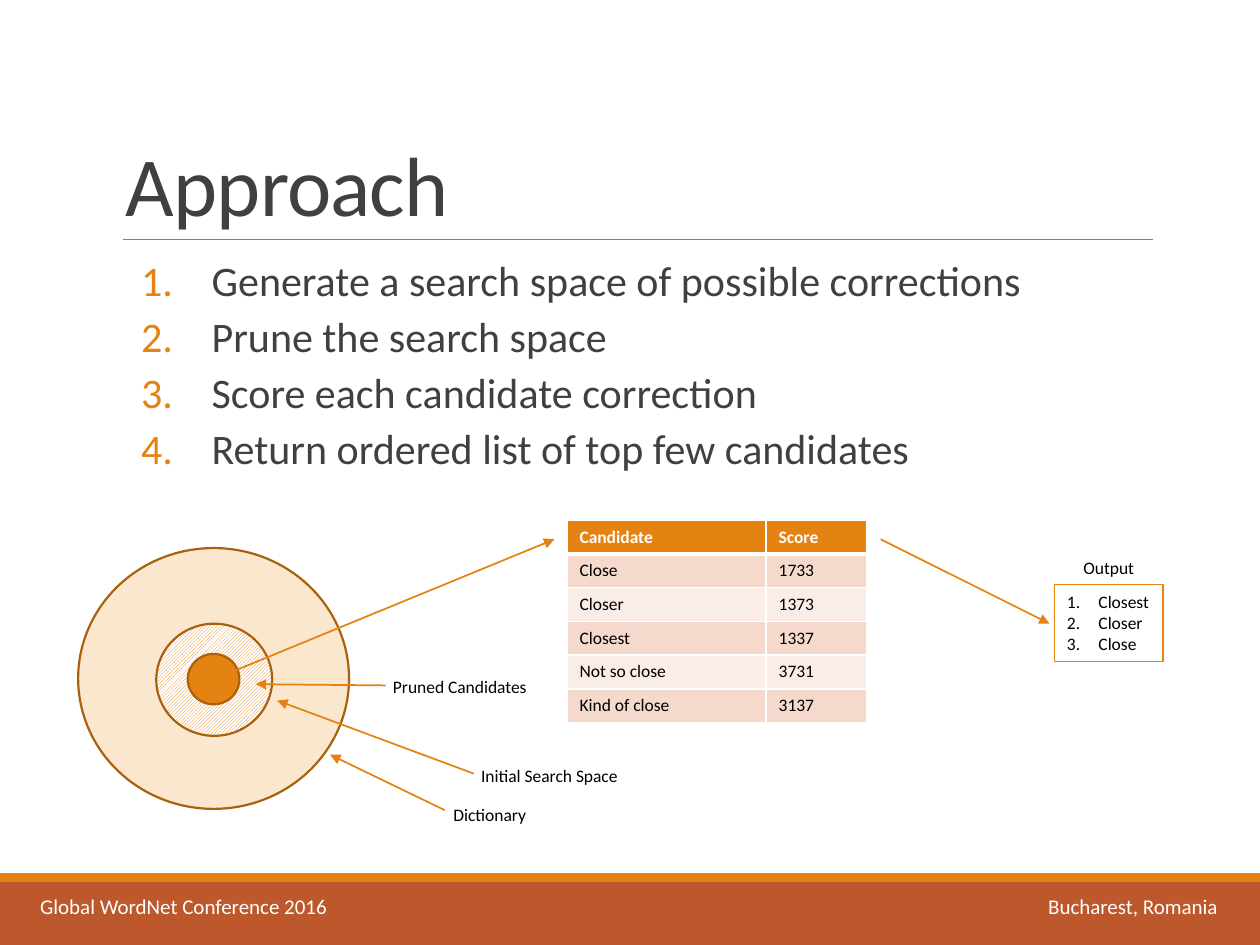
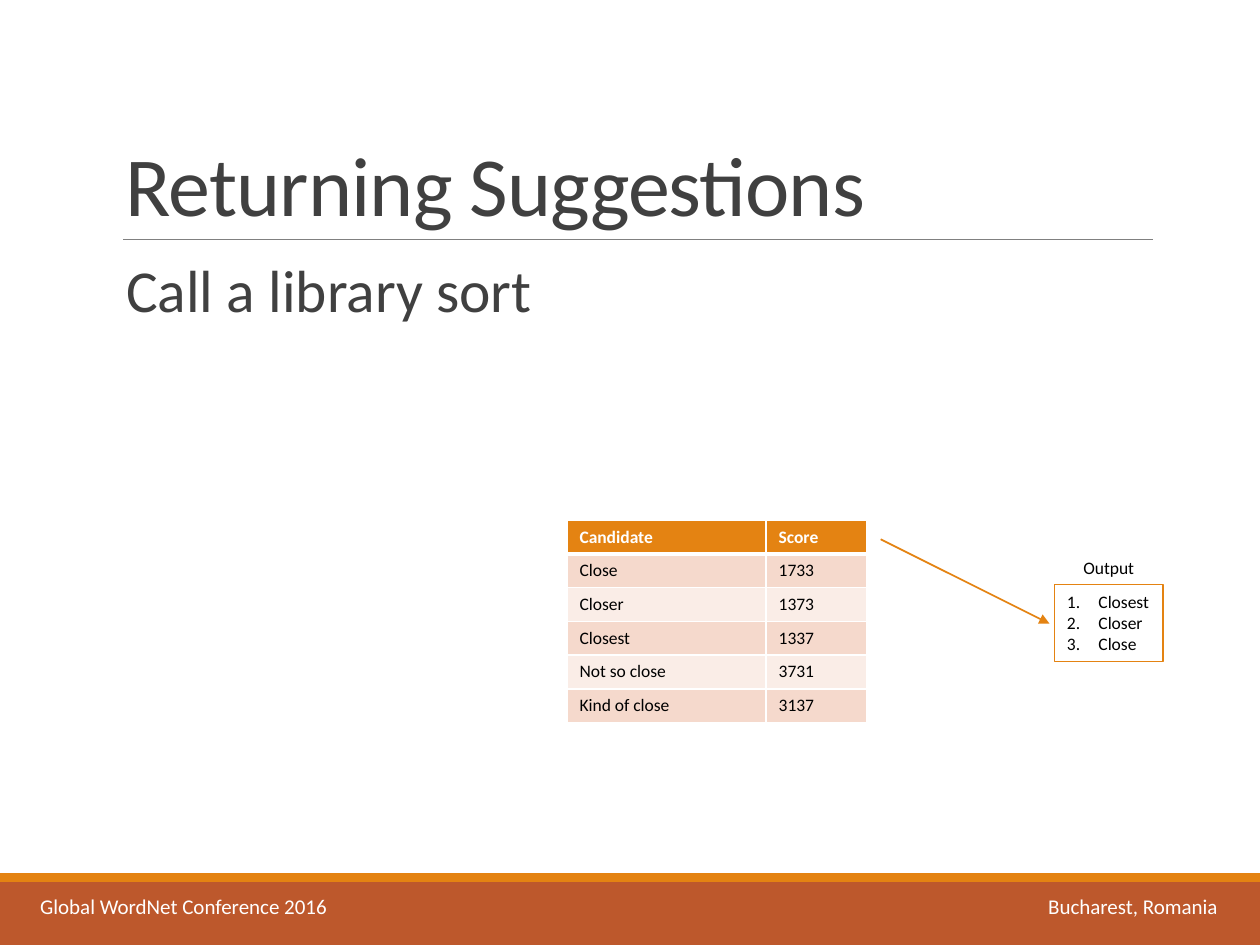
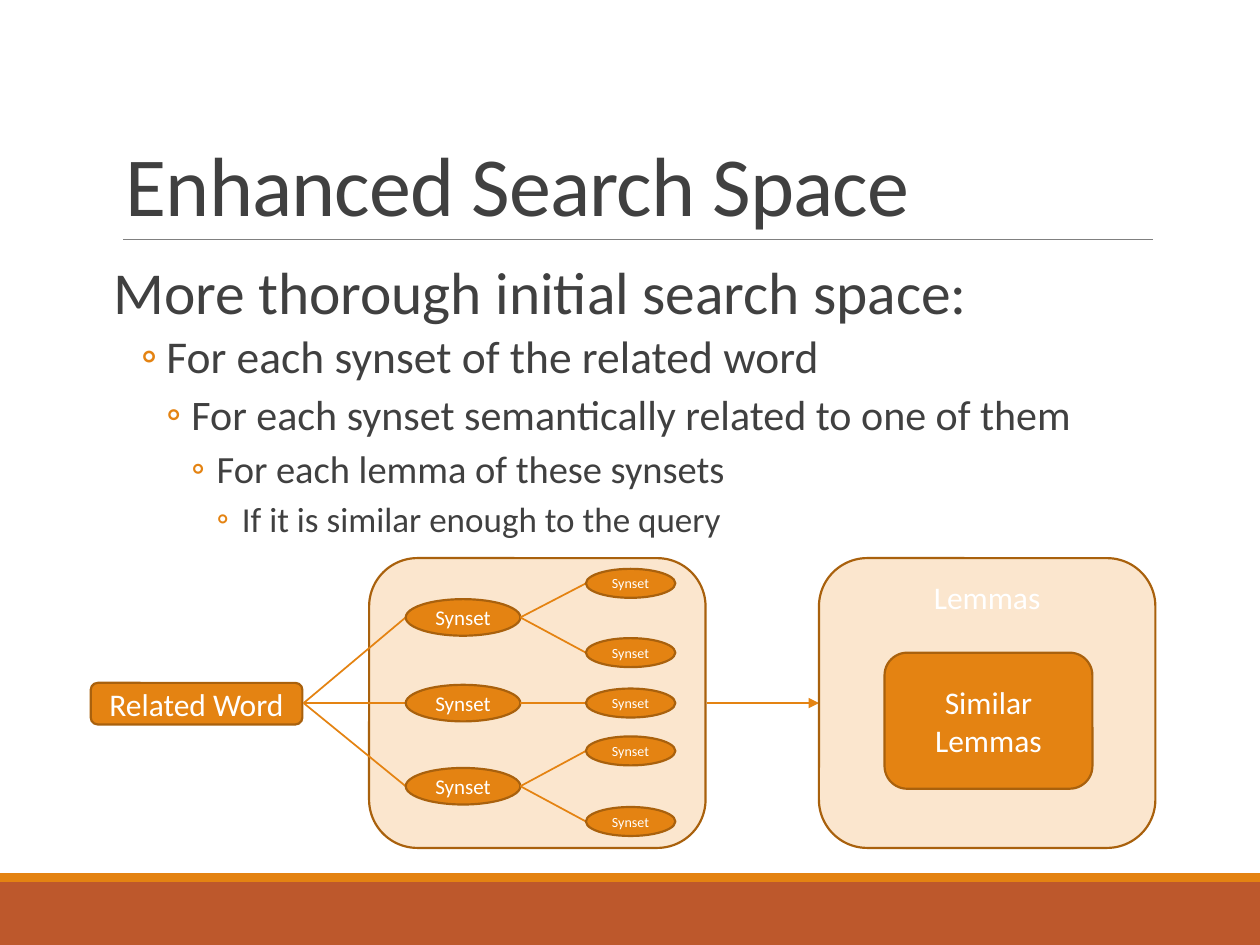
from lxml.etree import SubElement as Sub
from pptx import Presentation as Deck
from pptx.dml.color import RGBColor as Rgb
from pptx.enum.dml import MSO_PATTERN as Hatch
from pptx.enum.shapes import MSO_CONNECTOR as Link, MSO_SHAPE as Form
from pptx.enum.text import MSO_ANCHOR as Anchor, PP_ALIGN as Align
from pptx.oxml.ns import qn
from pptx.util import Inches, Pt

# Grid: 100 columns by 75 rows on a 10 x 7.5 inch slide
COLS, ROWS = 100, 75
WIDE, HIGH = Inches(10), Inches(7.5)

INK = {
    "amber": "E48312", "rust": "BD582C", "brown": "A9610D", "cream": "FBE6CE",
    "pink": "F5D9CC", "pale": "FAEDE7", "text": "404040", "rule": "808080",
    "white": "FFFFFF", "black": "000000",
}
FONT = "Calibri"


def ink(name):
    return Rgb.from_string(INK[name])


class Pen:
    def __init__(self):
        self.deck = Deck()
        self.deck.slide_width, self.deck.slide_height = WIDE, HIGH
        self.page = None

    def x(self, cols):
        return round(WIDE * cols / COLS)

    def y(self, rows):
        return round(HIGH * rows / ROWS)

    def place(self, box):
        left, top, wide, high = box
        return self.x(left), self.y(top), self.x(wide), self.y(high)

    # Slide with its bands, rule and title
    def start(self, title):
        self.page = self.deck.slides.add_slide(self.deck.slide_layouts[6])
        self.shape(Form.RECTANGLE, (0, 70, 100, 5), "rust", None)
        self.shape(Form.RECTANGLE, (0, 69.3, 100, 0.7), "amber", None)
        self.line((9.8, 19), (91.5, 19), "rule", 0.5)
        frame = self.text((9, 3.1, 82.5, 15.9), anchor=Anchor.BOTTOM)
        para = self.para(frame, title, 48, "text", space=0.85)
        para.runs[0].font._element.set("spc", "-50")

    # Text
    def setup(self, frame, anchor=Anchor.TOP, side=1):
        frame.word_wrap = True
        frame.vertical_anchor = anchor
        frame.margin_left = frame.margin_right = self.x(side)
        return frame

    def text(self, box, anchor=Anchor.TOP, side=1):
        area = self.page.shapes.add_textbox(*self.place(box))
        return self.setup(area.text_frame, anchor, side)

    def para(self, frame, words, size, color="black", align=Align.LEFT,
             space=None, gaps=None, bold=False):
        para = frame.paragraphs[0]
        if para.runs:
            para = frame.add_paragraph()
        para.alignment = align
        if space:
            para.line_spacing = space
        if gaps:
            para.space_before, para.space_after = map(Pt, gaps)
        run = para.add_run()
        run.text = words
        font = run.font
        font.name, font.size, font.bold = FONT, Pt(size), bold
        font.color.rgb = ink(color)
        return para

    def indent(self, para, left, hang, mark=None, color=None):
        props = para._p.get_or_add_pPr()
        props.set("marL", str(self.x(left)))
        props.set("indent", str(-self.x(hang)))
        if color:
            tint = Sub(props, qn("a:buClr"))
            Sub(tint, qn("a:srgbClr"), val=INK[color])
        if mark == "1.":
            Sub(props, qn("a:buFont"), typeface=FONT)
            Sub(props, qn("a:buAutoNum"), type="arabicPeriod")
        elif mark:
            Sub(props, qn("a:buFont"), typeface=FONT)
            Sub(props, qn("a:buChar"), char=mark)
        else:
            Sub(props, qn("a:buNone"))

    def label(self, left, top, words, wide=25.5):
        self.para(self.text((left, top, wide, 2.7)), words, 10)

    def footer(self, first, last):
        para = self.para(self.text((2.2, 70.4, 97.1, 3)),
                         f"{first}\t{last}", 12, "white")
        tabs = Sub(para._p.get_or_add_pPr(), qn("a:tabLst"))
        Sub(tabs, qn("a:tab"), pos=str(self.x(80)), algn="l")

    # Shapes
    def shape(self, form, box, fill="amber", edge="brown", width=1.25):
        item = self.page.shapes.add_shape(form, *self.place(box))
        item.shadow.inherit = False
        if fill == "hatch":
            item.fill.patterned()
            item.fill.pattern = Hatch.DARK_UPWARD_DIAGONAL
            item.fill.fore_color.rgb = ink("amber")
            item.fill.back_color.rgb = ink("white")
        elif fill:
            item.fill.solid()
            item.fill.fore_color.rgb = ink(fill)
        else:
            item.fill.background()
        if edge:
            item.line.color.rgb = ink(edge)
            item.line.width = Pt(width)
        else:
            item.line.fill.background()
        return item

    def node(self, form, box, words, size, fill="amber",
             anchor=Anchor.MIDDLE, side=1):
        item = self.shape(form, box, fill)
        frame = self.setup(item.text_frame, anchor, side)
        self.para(frame, words, size, "white", Align.CENTER)

    def oval(self, left, mid, wide, high, words, size):
        self.node(Form.OVAL, (left, mid - high / 2, wide, high),
                  words, size, side=0)

    def line(self, start, end, color="amber", width=1, head=False):
        item = self.page.shapes.add_connector(
            Link.STRAIGHT, self.x(start[0]), self.y(start[1]),
            self.x(end[0]), self.y(end[1]))
        item.line.color.rgb = ink(color)
        item.line.width = Pt(width)
        if head:
            Sub(item.line._get_or_add_ln(), qn("a:tailEnd"), type="triangle")
        Sub(item._element.spPr, qn("a:effectLst"))

    # Table
    def table(self, box, parts, data):
        grid = self.page.shapes.add_table(
            len(data), len(parts), *self.place(box)).table
        for col, part in zip(grid.columns, parts):
            col.width = self.x(part)
        for i, row in enumerate(data):
            top = i == 0
            fill = "amber" if top else ("pale", "pink")[i % 2]
            for j, words in enumerate(row):
                cell = grid.cell(i, j)
                for side in "LRTB":
                    thick = (side == "B" and top) or (side == "T" and i == 1)
                    self.edge(cell, side, 3 if thick else 1)
                cell.fill.solid()
                cell.fill.fore_color.rgb = ink(fill)
                self.para(cell.text_frame, words, 10,
                          "white" if top else "black", bold=top)

    def edge(self, cell, side, width):
        props = cell._tc.get_or_add_tcPr()
        line = Sub(props, qn(f"a:ln{side}"), w=str(Pt(width)))
        Sub(Sub(line, qn("a:solidFill")), qn("a:srgbClr"), val=INK["white"])

    # Score table, arrow and output list
    def scores(self):
        self.table((45, 41.3, 23.8, 16), (15.8, 8), (
            ("Candidate", "Score"), ("Close", "1733"), ("Closer", "1373"),
            ("Closest", "1337"), ("Not so close", "3731"),
            ("Kind of close", "3137")))
        self.line((69.9, 42.8), (83.3, 49.5), head=True)
        item = self.shape(Form.RECTANGLE, (83.7, 46.4, 8.6, 6.1),
                          None, "amber", 0.75)
        frame = self.setup(item.text_frame)
        for word in ("Closest", "Closer", "Close"):
            self.indent(self.para(frame, word, 10), 2.5, 2.5, "1.")
        self.label(85, 43.7, "Output", 7.3)
        self.footer("Global WordNet Conference 2016", "Bucharest, Romania")


def approach(pen):
    pen.start("Approach")
    frame = pen.text((9, 20.2, 82.5, 44), side=0)
    for step in ("Generate a search space of possible corrections",
                 "Prune the search space",
                 "Score each candidate correction",
                 "Return ordered list of top few candidates"):
        para = pen.para(frame, step, 24, "text", space=0.9, gaps=(2, 4))
        pen.indent(para, 7.8, 5.6, "1.", "amber")

    # Nested search spaces
    for box, fill in (((6.2, 43.5, 21.5, 20.7), "cream"),
                      ((12.4, 49.5, 9.2, 8.9), "hatch"),
                      ((14.9, 51.9, 4.1, 4), "amber")):
        pen.shape(Form.OVAL, box, fill)
    for start, end in (((17, 53.9), (44, 42.8)), ((35.3, 64.3), (26.2, 59.9)),
                       ((37.6, 61.4), (22, 55.6)), ((30.6, 54.4), (20.3, 54.3))):
        pen.line(start, end, head=True)
    pen.label(35, 63.3, "Dictionary")
    pen.label(37.2, 60.2, "Initial Search Space")
    pen.label(30.2, 53.2, "Pruned Candidates")
    pen.scores()


def results(pen):
    pen.start("Returning Suggestions")
    frame = pen.text((9, 20.2, 82.5, 44), side=0)
    para = pen.para(frame, "Call a library sort", 34, "text",
                    space=0.9, gaps=(12, 2))
    pen.indent(para, 1, 0)
    pen.scores()


def search(pen):
    pen.start("Enhanced Search Space")
    frame = pen.text((9, 20.4, 79.3, 24.5), side=0)
    para = pen.para(frame, "More thorough initial search space:", 34, "text",
                    space=0.9, gaps=(12, 2))
    pen.indent(para, 0, 0)
    for i, words in enumerate((
            "For each synset of the related word",
            "For each synset semantically related to one of them",
            "For each lemma of these synsets",
            "If it is similar enough to the query")):
        para = pen.para(frame, words, 26 - 2 * i, "text",
                        space=0.9, gaps=(2, 4))
        pen.indent(para, 4.2 + 2 * i, 2, "◦", "amber")

    # Tree from the related word to its synsets
    mid = 55.8
    pen.shape(Form.ROUNDED_RECTANGLE, (29.3, 44.3, 26.7, 23), "cream")
    pen.node(Form.ROUNDED_RECTANGLE, (7.2, 54.2, 16.8, 3.3),
             "Related Word", 18)
    tree = {49: (46.3, 51.8), mid: (mid,), 62.4: (59.6, 65.2)}
    for stem, leaves in tree.items():
        pen.line((24.1, mid), (32.2, stem))
        pen.oval(32.2, stem, 9.1, 2.9, "Synset", 12)
        for leaf in leaves:
            pen.line((41.3, stem), (46.5, leaf))
            pen.oval(46.5, leaf, 7.1, 2.3, "Synset", 8)

    # Lemmas
    pen.line((56.1, mid), (65, mid), head=True)
    pen.node(Form.ROUNDED_RECTANGLE, (65, 44.3, 26.7, 23), "Lemmas", 18,
             "cream", Anchor.TOP)
    pen.node(Form.ROUNDED_RECTANGLE, (70.2, 51.8, 16.5, 10.8),
             "Similar Lemmas", 18)


def main():
    pen = Pen()
    for draw in (approach, results, search):
        draw(pen)
    pen.deck.save("out.pptx")


if __name__ == "__main__":
    main()
